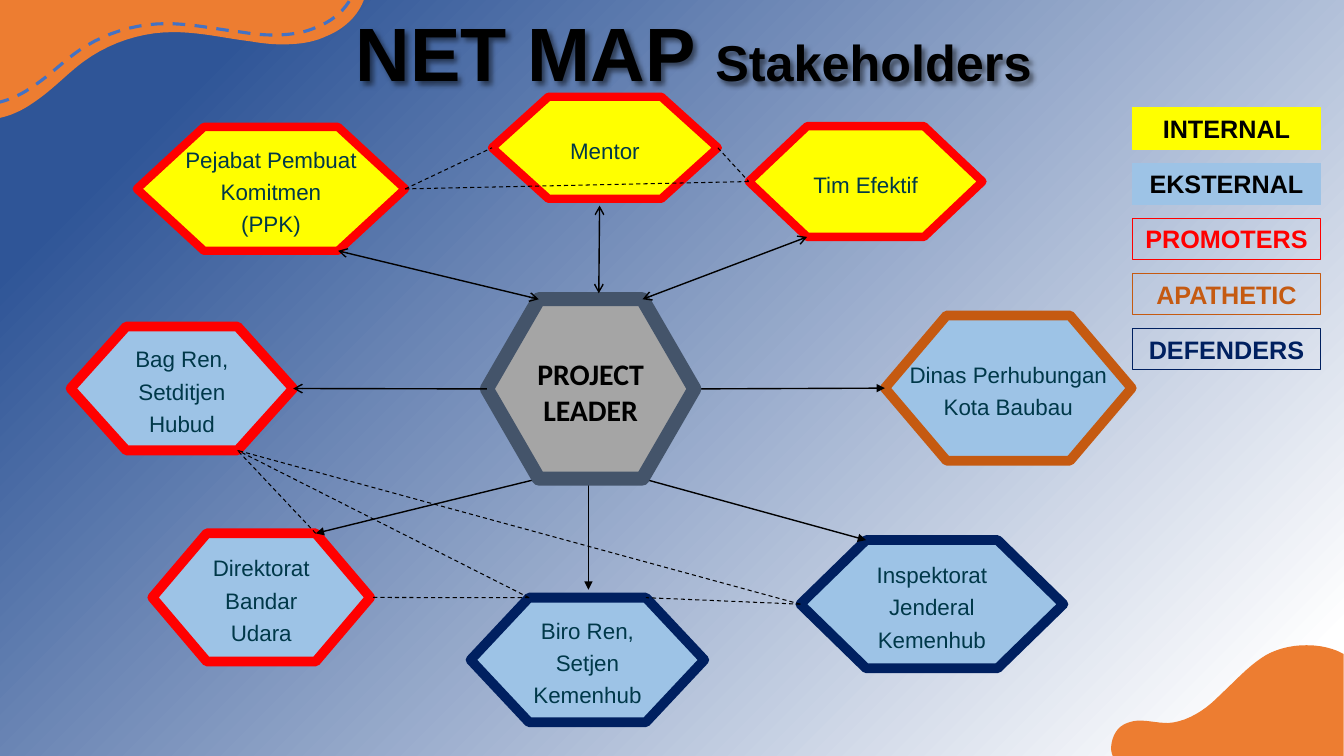
from lxml.etree import SubElement
from pptx import Presentation
from pptx.dml.color import RGBColor
from pptx.enum.dml import MSO_LINE
from pptx.enum.shapes import MSO_CONNECTOR, MSO_SHAPE
from pptx.enum.text import MSO_ANCHOR, PP_ALIGN
from pptx.oxml.ns import qn
from pptx.util import Cm, Pt

COLORS = {
    "black": "000000", "white": "FFFFFF", "deep_blue": "2F5597",
    "orange": "ED7D31", "dash_blue": "4472C4", "label": "003849",
    "internal": "FFFF00", "external": "9DC3E6", "promoter": "FF0000",
    "apathetic": "C55A11", "defender": "002060",
    "leader": "A5A5A5", "leader_edge": "44546A",
}

CORNERS = {
    "left": (0, 0.5), "top_left": (0.25, 0), "top_right": (0.75, 0),
    "right": (1, 0.5), "bottom_right": (0.75, 1), "bottom_left": (0.25, 1),
}

LEADER = (12.27, 7.54, 5.23, 4.52)
STAKEHOLDERS = {
    "Tim": ((18.87, 3.18, 5.89, 2.79), "Tim Efektif", "internal", "promoter", 6),
    "Biro": ((11.86, 15.06, 5.89, 3.14), "Biro Ren,\nSetjen\nKemenhub", "external", "defender", 7),
    "Direktorat": ((3.84, 13.44, 5.49, 3.23), "Direktorat\nBandar\nUdara", "external", "promoter", 7),
    "PPK": ((3.45, 3.2, 6.76, 3.12), "Pejabat Pembuat Komitmen\n(PPK)", "internal", "promoter", 6),
    "Dinas": ((22.3, 7.95, 6.22, 3.66), "Dinas Perhubungan\nKota Baubau", "external", "apathetic", 7),
    "Inspektorat": ((20.17, 13.61, 6.63, 3.23), "Inspektorat\nJenderal\nKemenhub", "external", "defender", 7),
    "Bag": ((1.78, 8.23, 5.61, 3.12), "Bag Ren,\nSetditjen\nHubud", "external", "promoter", 7),
    "Mentor": ((12.4, 2.44, 5.69, 2.57), "Mentor", "internal", "promoter", 6),
}
BOXES = {"Leader": LEADER} | {key: entry[0] for key, entry in STAKEHOLDERS.items()}

ORDERS = [
    ("Leader", "right", "Dinas", "left"),
    ("Leader", "bottom_left", "Direktorat", "top_right"),
    ("Leader", "bottom_right", "Inspektorat", "top_left"),
]
RELATIONS = [
    ("Biro", "top_left", "Bag", "bottom_right"),
    ("Inspektorat", "left", "Biro", "top_right"),
    ("Biro", "top_left", "Direktorat", "right"),
    ("Inspektorat", "left", "Bag", "bottom_right"),
    ("Direktorat", "top_right", "Bag", "bottom_right"),
    ("PPK", "right", "Mentor", "left"),
    ("Mentor", "right", "Tim", "left"),
    ("PPK", "right", "Tim", "left"),
]
EXCHANGES = [
    ("Leader", "top_right", "Tim", "bottom_left"),
    ("Leader", "top_left", "PPK", "bottom_right"),
]
LEGEND = [
    ("INTERNAL", "internal", "internal", "black"),
    ("EKSTERNAL", "external", "external", "black"),
    ("PROMOTERS", None, "promoter", "promoter"),
    ("APATHETIC", None, "apathetic", "apathetic"),
    ("DEFENDERS", None, "defender", "defender"),
]

TOP_WAVE = [
    (0, 2.97), (0.33, 2.9), (0.64, 2.74), (0.91, 2.54),
    (1.35, 2.24), (1.7, 1.85), (2.11, 1.55), (2.77, 1.07), (3.56, 0.81), (4.37, 0.81),
    (5.05, 0.81), (5.69, 0.97), (6.3, 1.04), (6.58, 1.09), (6.86, 1.12), (7.11, 1.12),
    (7.52, 1.12), (7.9, 1.07), (8.23, 0.91), (8.66, 0.74), (9.02, 0.41), (9.17, 0),
]
BOTTOM_WAVE = [
    (5.92, 0.22), (5.61, 0.05), (5.28, 0), (4.98, 0),
    (4.62, 0), (4.27, 0.08), (3.96, 0.25), (3.53, 0.51), (3.18, 0.91), (2.79, 1.27),
    (2.44, 1.63), (1.98, 1.93), (1.5, 1.96), (1.24, 1.96), (1.02, 1.9), (0.79, 1.9),
    (0.64, 1.9), (0.51, 1.93), (0.36, 2.01), (0.1, 2.16), (0, 2.57), (0.1, 2.79),
]


def rgb(key):
    return RGBColor.from_string(COLORS[key])


def paint(shape, fill, edge, width=0.75):
    shape.shadow.inherit = False
    if fill:
        shape.fill.solid()
        shape.fill.fore_color.rgb = rgb(fill)
    else:
        shape.fill.background()
    if edge:
        shape.line.color.rgb = rgb(edge)
        shape.line.width = Pt(width)
    else:
        shape.line.fill.background()


def write(shape, text, size, color, font="Arial", bold=False, spacing=1.0, side=0, top=0):
    frame = shape.text_frame
    frame.word_wrap = True
    frame.vertical_anchor = MSO_ANCHOR.MIDDLE
    frame.margin_left = frame.margin_right = Cm(side)
    frame.margin_top, frame.margin_bottom = Cm(top), 0
    frame.text = text
    for paragraph in frame.paragraphs:
        paragraph.alignment = PP_ALIGN.CENTER
        paragraph.line_spacing = spacing
        style(paragraph.runs[0], size, color, font, bold)


def style(run, size, color, font="Arial", bold=True):
    run.font.size = Pt(size)
    run.font.name = font
    run.font.bold = bold
    run.font.color.rgb = rgb(color)


def outline(slide, points, close=True):
    start, *rest = [(Cm(x), Cm(y)) for x, y in points]
    builder = slide.shapes.build_freeform(*start)
    builder.add_line_segments(rest, close=close)
    return builder.convert_to_shape()


def bezier(a, b, c, d, t):
    s = 1 - t
    return tuple(s**3 * p + 3 * s * s * t * q + 3 * s * t * t * r + t**3 * u
                 for p, q, r, u in zip(a, b, c, d))


def draw_wave(slide, box, controls, extent, corner=None, steps=10):
    left, top, width, height = box
    curve = [controls[0]]
    for i in range(0, len(controls) - 1, 3):
        curve += [bezier(*controls[i:i + 4], n / steps) for n in range(1, steps + 1)]
    if corner:
        curve.append(corner)
    points = [(left + x * width / extent[0], top + y * height / extent[1]) for x, y in curve]
    wave = outline(slide, points, close=bool(corner))
    if corner:
        paint(wave, "orange", None)
    else:
        paint(wave, None, "dash_blue", 2.25)
        wave.line.dash_style = MSO_LINE.DASH


def draw_title(slide, box):
    title = slide.shapes.add_textbox(*map(Cm, box))
    frame = title.text_frame
    frame.word_wrap = True
    frame.margin_left = frame.margin_right = frame.margin_top = frame.margin_bottom = Cm(0.25)
    heading = frame.paragraphs[0]
    heading.line_spacing = 0.9
    for text, size in (("NET MAP ", 54), ("Stakeholders", 36)):
        run = heading.add_run()
        run.text = text
        style(run, size, "black")
    effects = SubElement(title._element.spPr, qn("a:effectLst"))
    shadow = SubElement(effects, qn("a:outerShdw"), blurRad="50800", dist="38100", dir="2700000")
    shade = SubElement(shadow, qn("a:srgbClr"), val=COLORS["black"])
    SubElement(shade, qn("a:alpha"), val="50000")


def corner_of(box, corner):
    x, y = CORNERS[corner]
    return box[0] + x * box[2], box[1] + y * box[3]


def draw_hexagon(slide, box, fill, edge, width):
    hexagon = outline(slide, [corner_of(box, corner) for corner in CORNERS])
    paint(hexagon, fill, edge, width)
    SubElement(hexagon.line._get_or_add_ln(), qn("a:round"))
    return hexagon


def draw_link(slide, start, end, width=1.0, head=None, tail=None):
    link = slide.shapes.add_connector(MSO_CONNECTOR.STRAIGHT, *map(Cm, start + end))
    link.line.color.rgb = rgb("black")
    link.line.width = Pt(width)
    if not tail:
        link.line.dash_style = MSO_LINE.DASH
    for tag, kind in (("a:headEnd", head), ("a:tailEnd", tail)):
        if kind:
            SubElement(link.line._get_or_add_ln(), qn(tag), type=kind)
    SubElement(link._element.spPr, qn("a:effectLst"))


def draw_links(slide, links, **look):
    for source, source_corner, target, target_corner in links:
        draw_link(slide, corner_of(BOXES[source], source_corner),
                  corner_of(BOXES[target], target_corner), **look)


def draw_map(slide):
    for box, label, fill, edge, width in STAKEHOLDERS.values():
        hexagon = draw_hexagon(slide, box, fill, edge, width)
        write(hexagon, label, 16, "label", spacing=1.2, side=0.5)
    draw_links(slide, ORDERS, tail="triangle")
    draw_link(slide, (14.83, 12.04), (14.83, 14.86), tail="triangle")
    draw_links(slide, RELATIONS, width=0.75)
    leader = draw_hexagon(slide, LEADER, "leader", "leader_edge", 10)
    write(leader, "PROJECT\nLEADER", 21.3, "black", font="Calibri", bold=True, top=0.13)
    draw_links(slide, EXCHANGES, head="arrow", tail="arrow")
    draw_link(slide, (15.09, 7.39), (15.11, 5.18), head="arrow", tail="arrow")
    draw_links(slide, [("Leader", "left", "Bag", "right")], tail="arrow")


def draw_legend(slide, box, pitch=1.39):
    left, top, width, height = box
    for i, (label, fill, edge, ink) in enumerate(LEGEND):
        key = slide.shapes.add_shape(
            MSO_SHAPE.RECTANGLE, Cm(left), Cm(top + i * pitch), Cm(width), Cm(height))
        paint(key, fill, edge)
        write(key, label, 18, ink, bold=True)


def main():
    deck = Presentation()
    deck.slide_width, deck.slide_height = Cm(33.87), Cm(19.05)
    slide = deck.slides.add_slide(deck.slide_layouts[6])
    backdrop = slide.background.fill
    backdrop.gradient()
    backdrop.gradient_angle = 315
    for stop, key, position in zip(backdrop.gradient_stops, ("deep_blue", "white"), (0.13, 0.94)):
        stop.color.rgb = rgb(key)
        stop.position = position
    draw_wave(slide, (27.94, 16.26, 5.92, 2.79), BOTTOM_WAVE, (5.92, 2.79), corner=(5.92, 2.79))
    draw_wave(slide, (0, 0, 9.17, 2.97), TOP_WAVE, (9.17, 2.97), corner=(0, 0))
    draw_wave(slide, (-0.08, -0.15, 8.97, 2.74), TOP_WAVE, (9.17, 2.97))
    draw_title(slide, (8.71, 0.15, 21.06, 2.06))
    draw_map(slide)
    draw_legend(slide, (28.55, 2.72, 4.72, 1.04))
    deck.save("out.pptx")


if __name__ == "__main__":
    main()
